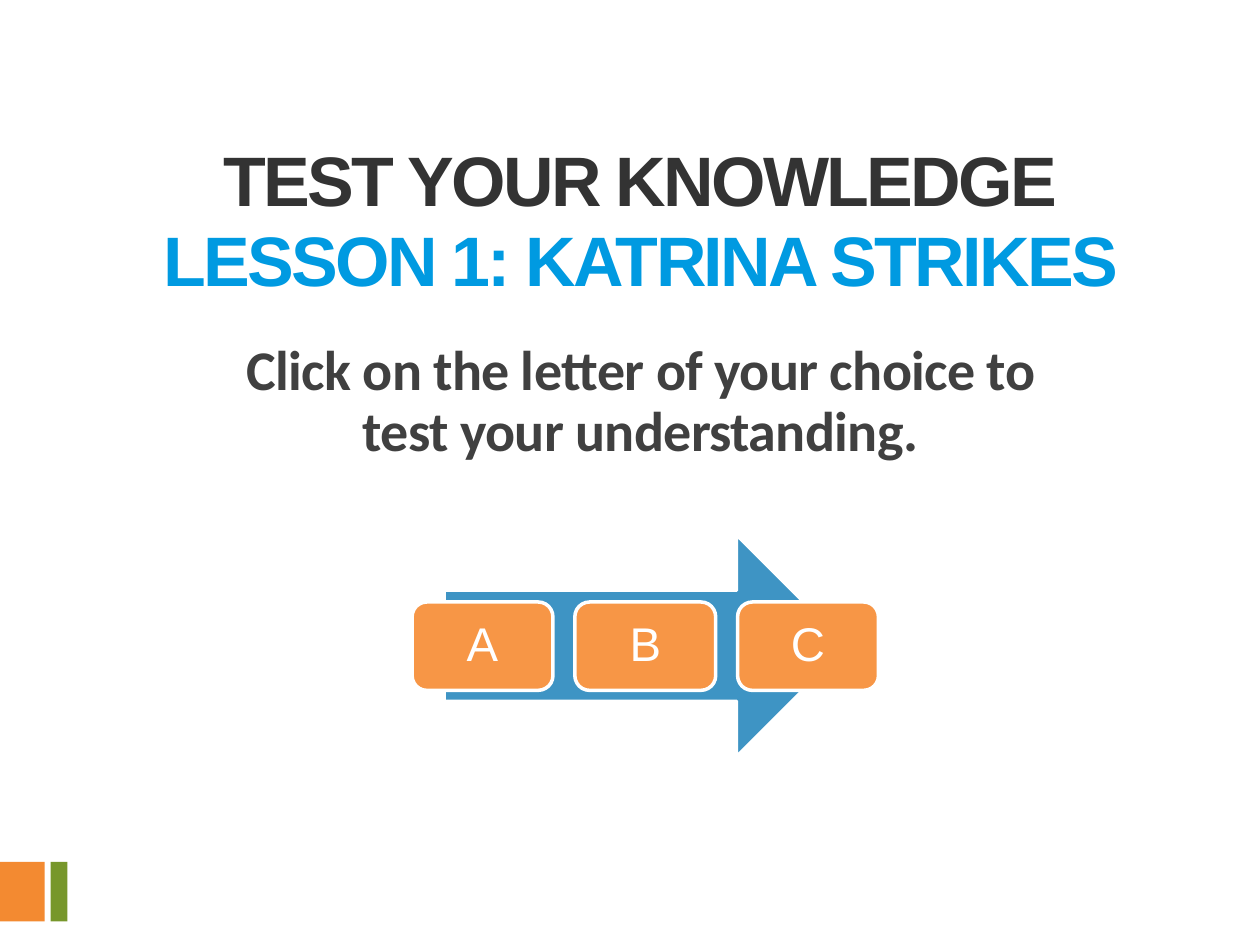
from dataclasses import dataclass

from pptx import Presentation
from pptx.dml.color import RGBColor
from pptx.enum import shapes, text
from pptx.util import Pt

HUES = {
    "white": "FFFFFF", "dark": "333333", "blue": "009AE1", "grey": "404040",
    "arrow": "3E94C4", "card": "F79646", "orange": "F38A31", "green": "77972B",
}
KIND = shapes.MSO_SHAPE


@dataclass
class Box:
    left: float
    top: float
    wide: float
    high: float

    def pts(self) -> tuple:
        return Pt(self.left), Pt(self.top), Pt(self.wide), Pt(self.high)


def tint(name: str) -> RGBColor:
    return RGBColor.from_string(HUES[name])


def draw(slide, kind, box: Box, fill: str, edge: float = 0):
    """Add a filled shape; edge is the width of its white outline."""
    shape = slide.shapes.add_shape(kind, *box.pts())
    shape.shadow.inherit = False
    shape.fill.solid()
    shape.fill.fore_color.rgb = tint(fill)
    if edge:
        shape.line.color.rgb = tint("white")
        shape.line.width = Pt(edge)
    else:
        shape.line.fill.background()
    return shape


def write(shape, *lines: tuple[str, str], font: str, size: float,
          bold: bool = False, track: float = 0, pitch: float = 0.9,
          anchor=text.MSO_ANCHOR.TOP) -> None:
    """Set (words, colour) lines as one centred paragraph; track is in points."""
    frame = shape.text_frame
    frame.word_wrap = True
    frame.vertical_anchor = anchor
    para = frame.paragraphs[0]
    para.alignment = text.PP_ALIGN.CENTER
    para.line_spacing = pitch
    for i, (words, hue) in enumerate(lines):
        if i:
            para.add_line_break()
        run = para.add_run()
        run.text = words
        run.font.name = font
        run.font.size = Pt(size)
        run.font.bold = bold
        run.font.color.rgb = tint(hue)
        if track:
            run.font._element.set("spc", str(round(track * 100)))


def main() -> None:
    deck = Presentation()
    deck.slide_width, deck.slide_height = Pt(720), Pt(540)
    slide = deck.slides.add_slide(deck.slide_layouts[6])

    draw(slide, KIND.RECTANGLE, Box(0, 492.5, 25.5, 34), "orange")
    draw(slide, KIND.RECTANGLE, Box(29, 492.5, 9.5, 34), "green")

    title = slide.shapes.add_textbox(*Box(60, 78, 612, 116).pts())
    write(title, ("TEST YOUR KNOWLEDGE", "dark"),
          ("LESSON 1: KATRINA STRIKES", "blue"),
          font="Arial", size=40, bold=True, track=-1.5, pitch=0.95)

    prompt = slide.shapes.add_textbox(*Box(114, 192, 504, 84).pts())
    write(prompt,
          ("Click on the letter of your choice to test your understanding.", "grey"),
          font="Calibri", size=32, bold=True, track=-0.4)

    draw(slide, KIND.RIGHT_ARROW, Box(254, 306, 230, 126), "arrow", 1.5)
    for i, letter in enumerate("ABC"):
        card = draw(slide, KIND.ROUNDED_RECTANGLE,
                    Box(235.5 + 93 * i, 344, 80.5, 50.5), "card", 2)
        write(card, (letter, "white"), font="Arial", size=27,
              anchor=text.MSO_ANCHOR.MIDDLE)

    deck.save("out.pptx")


if __name__ == "__main__":
    main()
